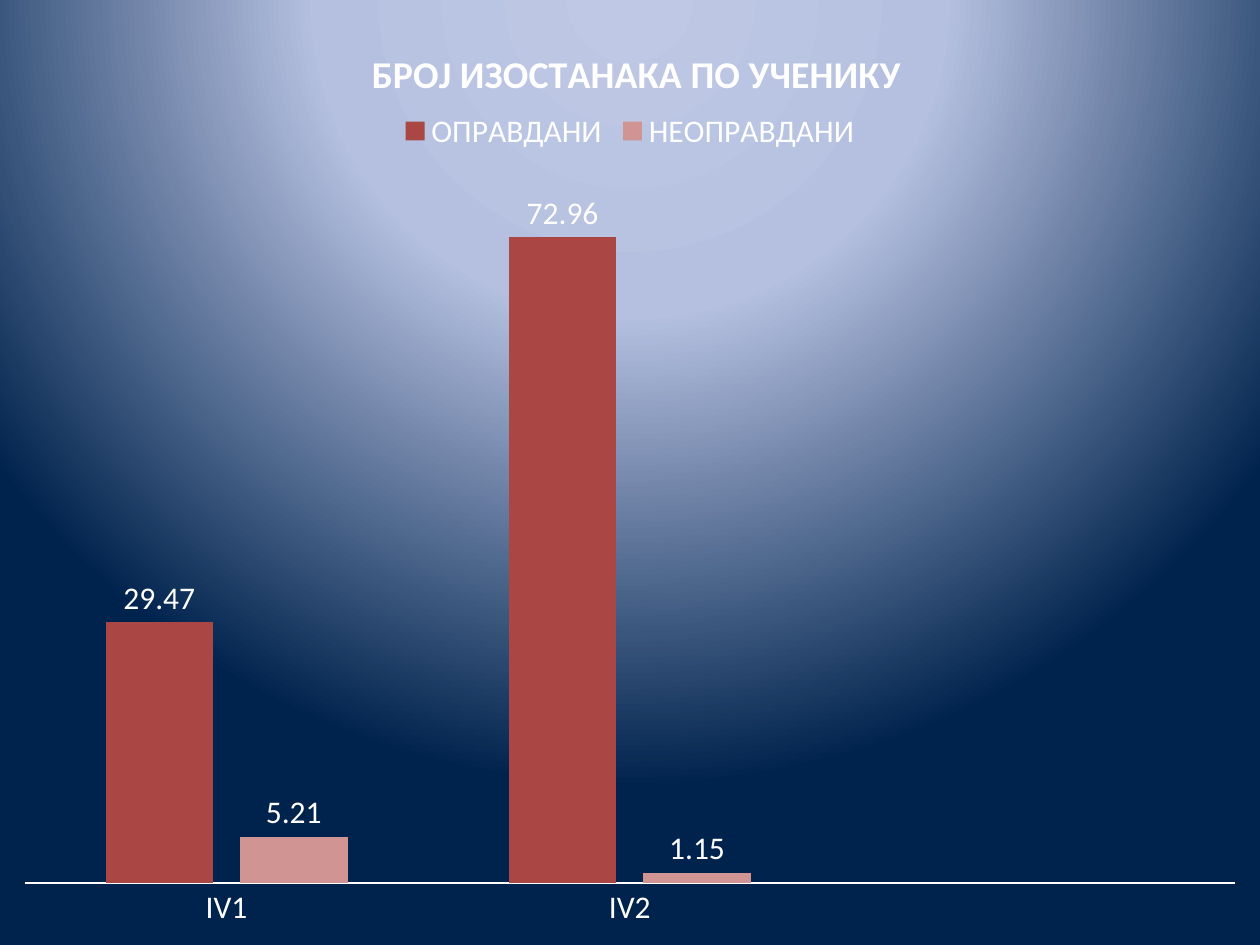
import pptx
import pptx.chart.data
import pptx.dml.color
import pptx.enum.chart
import pptx.oxml
import pptx.oxml.ns
import pptx.util

PX = 914400 // 126
WIDE, HIGH = 1260, 945
RGB = pptx.dml.color.RGBColor
WHITE = RGB(0xFF, 0xFF, 0xFF)
RED = RGB(0xAA, 0x47, 0x44)
PINK = RGB(0xD0, 0x94, 0x93)
PALE = RGB(0xBF, 0xC9, 0xE5)
MIST = RGB(0xB5, 0xC0, 0xE0)
NAVY = RGB(0x00, 0x23, 0x4D)
FACE = "Calibri"
TITLE = "БРОЈ ИЗОСТАНАКА ПО УЧЕНИКУ"
GROUPS = ["IV1", "IV2", ""]
ROWS = [
    ("ОПРАВДАНИ", [29.47, 72.96, None], RED),
    ("НЕОПРАВДАНИ", [5.21, 1.15, None], PINK),
]


def paint_back(slide):
    slide.background.fill.gradient()
    old = slide.element.xpath("p:cSld/p:bg/p:bgPr/a:gradFill")[0]
    stops = "".join(
        f'<a:gs pos="{pos * 1000}"><a:srgbClr val="{tone}"/></a:gs>'
        for pos, tone in [(0, PALE), (40, MIST), (100, NAVY)]
    )
    new = pptx.oxml.parse_xml(
        f'<a:gradFill {pptx.oxml.ns.nsdecls("a")} rotWithShape="1">'
        f'<a:gsLst>{stops}</a:gsLst><a:path path="circle">'
        '<a:fillToRect l="50000" t="-80000" r="50000" b="180000"/>'
        "</a:path></a:gradFill>"
    )
    old.getparent().replace(old, new)


def style(font, size, bold=False):
    font.name = FACE
    font.size = pptx.util.Pt(size)
    font.bold = bold
    font.color.rgb = WHITE


def pin(part, index, box, spot, inner=False):
    for old in part.xpath("c:layout"):
        part.remove(old)
    left, top, wide, high = box
    rates = [
        ("x", spot[0] / wide),
        ("y", spot[1] / high),
    ]
    if len(spot) == 4:
        rates += [("w", spot[2] / wide), ("h", spot[3] / high)]
    tags = '<c:layoutTarget val="inner"/>' if inner else ""
    tags += '<c:xMode val="edge"/><c:yMode val="edge"/>'
    tags += "".join(f'<c:{key} val="{rate:.4f}"/>' for key, rate in rates)
    part.insert(index, pptx.oxml.parse_xml(
        f'<c:layout {pptx.oxml.ns.nsdecls("c")}>'
        f"<c:manualLayout>{tags}</c:manualLayout></c:layout>"
    ))


def add_title(chart, box):
    chart.has_title = True
    run = chart.chart_title.text_frame.paragraphs[0].add_run()
    run.text = TITLE
    style(run.font, 21.6, True)
    chart.chart_title.include_in_layout = False
    pin(chart.element.xpath("c:chart/c:title")[0], 1, box, (365, 40))


def add_key(chart, box):
    chart.has_legend = True
    key = chart.legend
    key.position = pptx.enum.chart.XL_LEGEND_POSITION.TOP
    key.include_in_layout = False
    style(key.font, 18)
    pin(chart.element.xpath("c:chart/c:legend")[0], 1, box, (395, 112, 470, 38))


def set_axes(chart):
    none = pptx.enum.chart.XL_TICK_MARK.NONE
    base = chart.category_axis
    base.major_tick_mark = base.minor_tick_mark = none
    base.has_major_gridlines = False
    base.format.line.color.rgb = WHITE
    base.format.line.width = pptx.util.Pt(1)
    style(base.tick_labels.font, 18)
    side = chart.value_axis
    side.minimum_scale, side.maximum_scale = 0, 80
    side.has_major_gridlines = False
    side.visible = False


def set_bars(chart):
    plot = chart.plots[0]
    plot.vary_by_categories = False
    plot.gap_width = 150
    plot.overlap = -25
    for bars, (name, vals, tone) in zip(plot.series, ROWS):
        bars.format.fill.solid()
        bars.format.fill.fore_color.rgb = tone
        bars.invert_if_negative = False
        tags = bars.data_labels
        tags.show_value = True
        tags.position = pptx.enum.chart.XL_LABEL_POSITION.OUTSIDE_END
        style(tags.font, 18)


def add_graph(slide, box):
    data = pptx.chart.data.CategoryChartData()
    data.categories = GROUPS
    for name, vals, tone in ROWS:
        data.add_series(name, vals)
    kind = pptx.enum.chart.XL_CHART_TYPE.COLUMN_CLUSTERED
    chart = slide.shapes.add_chart(kind, *[n * PX for n in box], data).chart
    style(chart.font, 18)
    add_title(chart, box)
    add_key(chart, box)
    set_axes(chart)
    set_bars(chart)
    area = chart.element.xpath("c:chart/c:plotArea")[0]
    pin(area, 0, box, (25, 175, 1210, 708), True)


def main():
    deck = pptx.Presentation()
    deck.slide_width, deck.slide_height = WIDE * PX, HIGH * PX
    slide = deck.slides.add_slide(deck.slide_layouts[6])
    paint_back(slide)
    add_graph(slide, (0, 0, WIDE, HIGH))
    deck.save("out.pptx")


if __name__ == "__main__":
    main()
